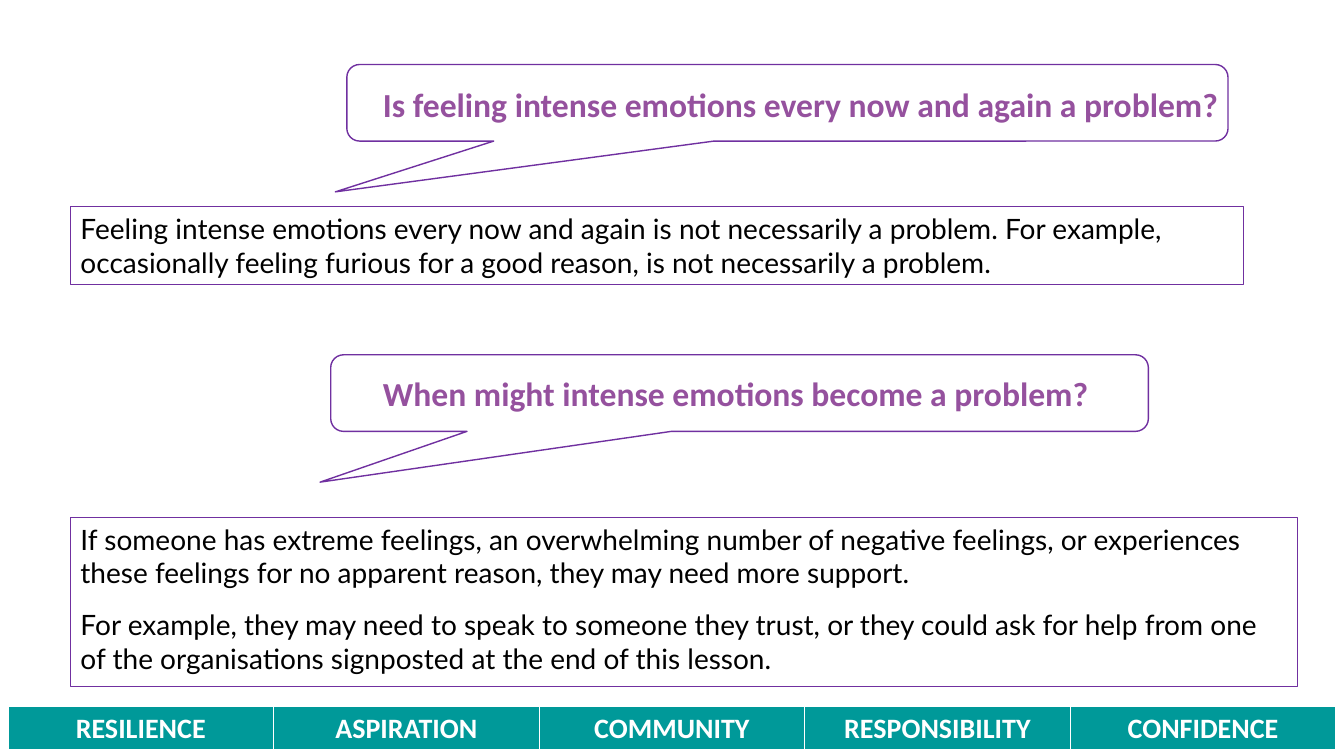
from lxml.etree import SubElement
from pptx import Presentation
from pptx.dml.color import RGBColor
from pptx.enum.shapes import MSO_SHAPE
from pptx.enum.text import MSO_ANCHOR, PP_ALIGN
from pptx.oxml.ns import qn
from pptx.util import Inches, Pt

PURPLE = RGBColor(0x70, 0x30, 0xA0)
MAUVE = RGBColor(0x95, 0x51, 0x9E)
TEAL = RGBColor(0x00, 0x99, 0x99)
BLACK = RGBColor(0, 0, 0)
WHITE = RGBColor(255, 255, 255)

VALUES = ["RESILIENCE", "ASPIRATION", "COMMUNITY", "RESPONSIBILITY", "CONFIDENCE"]
OFTEN = ("Feeling intense emotions every now and again is not necessarily a problem. "
         "For example, occasionally feeling furious for a good reason, "
         "is not necessarily a problem.")
SUPPORT = ("If someone has extreme feelings, an overwhelming number of negative feelings, "
           "or experiences these feelings for no apparent reason, "
           "they may need more support.")
TRUST = ("For example, they may need to speak to someone they trust, or they could ask "
         "for help from one of the organisations signposted at the end of this lesson.")


def write(frame, *texts, font="Calibri", size=20, color=BLACK, bold=False,
          align=PP_ALIGN.LEFT, gap=0):
    for i, text in enumerate(texts):
        para = frame.add_paragraph() if i else frame.paragraphs[0]
        para.alignment = align
        para.space_before = Pt(gap if i else 0)
        run = para.add_run()
        run.text = text
        run.font.name = font
        run.font.size = Pt(size)
        run.font.bold = bold
        run.font.color.rgb = color


def add_frame(slide, kind, box, width):
    shape = slide.shapes.add_shape(kind, *map(Inches, box))
    shape.shadow.inherit = False
    shape.fill.background()
    shape.line.color.rgb = PURPLE
    shape.line.width = Pt(width)
    return shape


def add_answer(slide, box, *texts):
    frame = add_frame(slide, MSO_SHAPE.RECTANGLE, box, 0.75).text_frame
    frame.word_wrap = True
    frame.vertical_anchor = MSO_ANCHOR.TOP
    write(frame, *texts, font="Lato", gap=13.2)


def add_ask(slide, text, box, bubble):
    label = slide.shapes.add_textbox(*map(Inches, box))
    label.text_frame.word_wrap = True
    write(label.text_frame, text, size=24, color=MAUVE, bold=True)
    shape = add_frame(slide, MSO_SHAPE.ROUNDED_RECTANGULAR_CALLOUT, bubble, 1)
    for i, value in enumerate((-0.513, 1.163, 0.167)):
        shape.adjustments[i] = value


def add_edges(cell):
    props = cell._tc.get_or_add_tcPr()
    for side, width in zip("LRTB", (1, 1, 1, 3)):
        line = SubElement(props, qn(f"a:ln{side}"), w=str(Pt(width)))
        fill = SubElement(line, qn("a:solidFill"))
        SubElement(fill, qn("a:srgbClr"), val=str(WHITE))


def add_strip(slide, names, box):
    table = slide.shapes.add_table(1, len(names), *map(Inches, box)).table
    table.first_row = False
    table.horz_banding = False
    for cell, name in zip(table.rows[0].cells, names):
        add_edges(cell)
        cell.fill.solid()
        cell.fill.fore_color.rgb = TEAL
        write(cell.text_frame, name, color=WHITE, bold=True, align=PP_ALIGN.CENTER)


def main():
    deck = Presentation()
    deck.slide_width = Inches(13.33)
    deck.slide_height = Inches(7.5)
    slide = deck.slides.add_slide(deck.slide_layouts[6])
    add_answer(slide, (0.7, 2.05, 11.63, 0.77), OFTEN)
    add_answer(slide, (0.7, 5.13, 12.17, 1.68), SUPPORT, TRUST)
    add_ask(slide, "Is feeling intense emotions every now and again a problem?",
            (3.7, 0.78, 8.9, 0.5), (3.44, 0.64, 8.74, 0.76))
    add_ask(slide, "When might intense emotions become a problem?",
            (3.7, 3.65, 7.27, 0.5), (3.28, 3.52, 8.11, 0.76))
    add_strip(slide, VALUES, (0.08, 7.01, 13.17, 0.44))
    deck.save("out.pptx")


if __name__ == "__main__":
    main()
